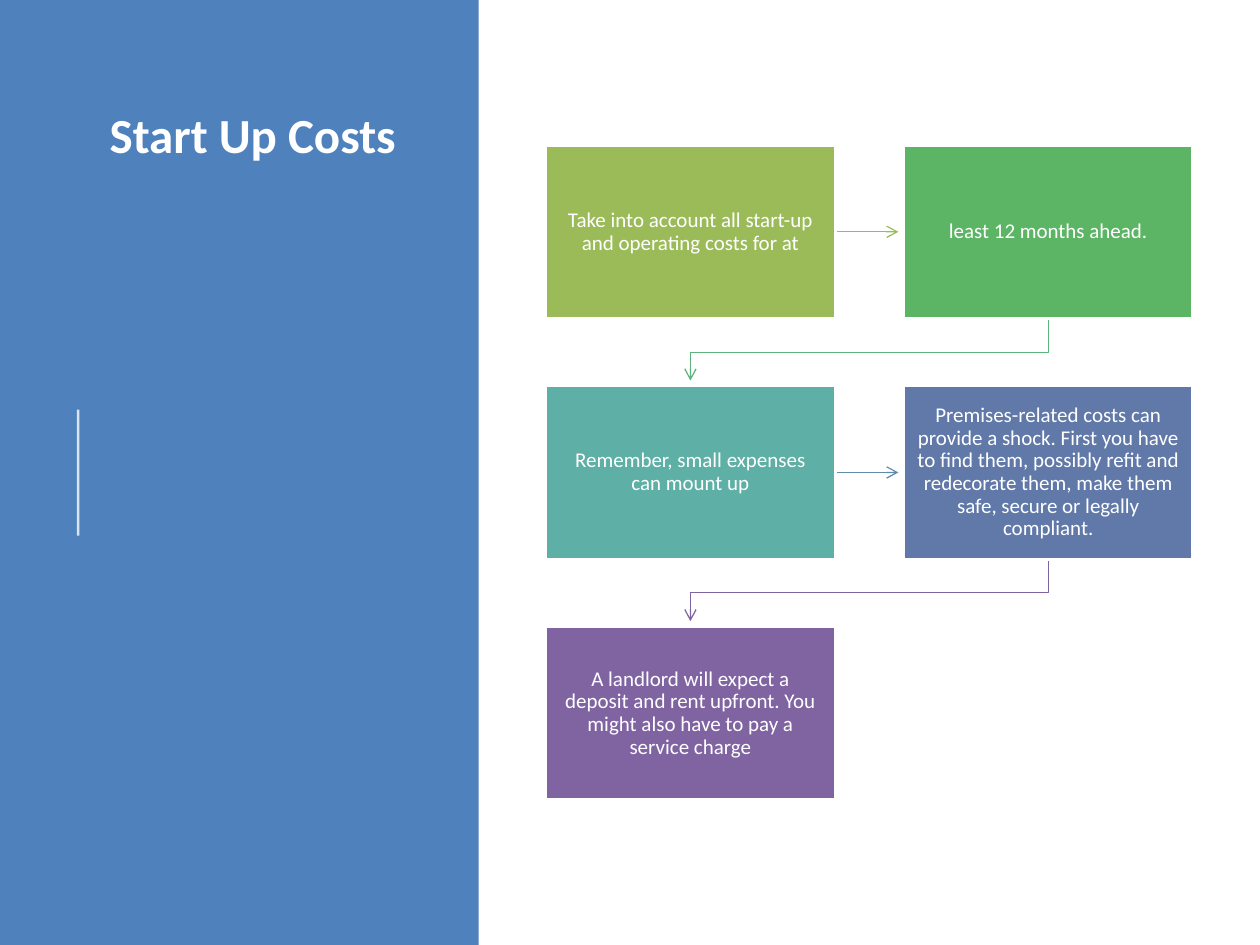
from lxml import etree
from pptx import Presentation
from pptx.dml.color import RGBColor
from pptx.enum.shapes import MSO_CONNECTOR, MSO_SHAPE
from pptx.enum.text import MSO_ANCHOR, MSO_AUTO_SIZE, PP_ALIGN
from pptx.oxml.ns import qn
from pptx.util import Inches, Pt

STRAIGHT = MSO_CONNECTOR.STRAIGHT
RECTANGLE = MSO_SHAPE.RECTANGLE
TOP, MIDDLE = MSO_ANCHOR.TOP, MSO_ANCHOR.MIDDLE
LEFT, CENTER = PP_ALIGN.LEFT, PP_ALIGN.CENTER
NO_FIT = MSO_AUTO_SIZE.NONE
FONT = "Calibri"
COLORS = {
    "white": "FFFFFF", "panel": "4F81BD",
    "olive": "9BBB59", "green": "5CB565", "teal": "5EAFA6",
    "blue": "6179A8", "purple": "8064A2",
    "green_arrow": "5CB37C", "blue_arrow": "608CAB",
}
GRID_LEFT, GRID_TOP = 4.33, 1.15
BOX_WIDTH, BOX_HEIGHT = 2.3, 1.38
COLUMN_STEP, ROW_STEP = 2.84, 1.91
ARROW_GAP = 0.04
STEPS = [
    ("Take into account all start-up and operating costs for at", "olive", "olive"),
    ("least 12 months ahead.", "green", "green_arrow"),
    ("Remember, small expenses can mount up", "teal", "blue_arrow"),
    ("Premises-related costs can provide a shock. First you have to find them, possibly refit "
     "and redecorate them, make them safe, secure or legally compliant.", "blue", "purple"),
    ("A landlord will expect a deposit and rent upfront. You might also have to pay a service charge",
     "purple", None),
]


def color(name):
    return RGBColor.from_string(COLORS[name])


def style_line(shape, name, width, arrow=False):
    shape.line.color.rgb = color(name)
    shape.line.width = Pt(width)
    properties = shape._element.spPr
    if properties.find(qn("a:effectLst")) is None:
        etree.SubElement(properties, qn("a:effectLst"))
    if arrow:
        etree.SubElement(properties.find(qn("a:ln")), qn("a:tailEnd"), type="arrow")


presentation = Presentation()
presentation.slide_width, presentation.slide_height = Inches(10), Inches(7.5)
slide = presentation.slides.add_slide(presentation.slide_layouts[5])
shapes = slide.shapes

panel = shapes.add_shape(RECTANGLE, 0, 0, Inches(3.8), presentation.slide_height)
panel.shadow.inherit = False
panel.fill.solid()
panel.fill.fore_color.rgb = color("panel")
panel.line.fill.background()

title = shapes.title
title._element.addprevious(panel._element)
title.left, title.top, title.width, title.height = map(Inches, (0.77, 0.78, 2.76, 6.02))
title_frame = title.text_frame
title_frame.text = "Start Up Costs"
title_frame.vertical_anchor = TOP
title_frame.word_wrap = True
title_frame.auto_size = NO_FIT
paragraph = title_frame.paragraphs[0]
paragraph.alignment = LEFT
paragraph.font.name = FONT
paragraph.font.size = Pt(28)
paragraph.font.bold = True
paragraph.font.color.rgb = color("white")

accent = shapes.add_connector(STRAIGHT, Inches(0.62), Inches(4.25), Inches(0.62), Inches(3.25))
style_line(accent, "white", 1.5)
accent_color = accent._element.spPr.find(".//" + qn("a:srgbClr"))
etree.SubElement(accent_color, qn("a:alpha"), val="80000")

for index, (text, fill, arrow_color) in enumerate(STEPS):
    row, column = divmod(index, 2)
    left = GRID_LEFT + column * COLUMN_STEP
    top = GRID_TOP + row * ROW_STEP
    box = shapes.add_shape(RECTANGLE, Inches(left), Inches(top), Inches(BOX_WIDTH), Inches(BOX_HEIGHT))
    box.fill.solid()
    box.fill.fore_color.rgb = color(fill)
    style_line(box, "white", 2)
    frame = box.text_frame
    frame.word_wrap = True
    frame.vertical_anchor = MIDDLE
    frame.margin_left = frame.margin_right = Inches(0.11)
    frame.margin_top = frame.margin_bottom = Inches(0.12)
    frame.text = text
    paragraph = frame.paragraphs[0]
    paragraph.alignment = CENTER
    paragraph.line_spacing = 0.9
    paragraph.font.name = FONT
    paragraph.font.size = Pt(12)
    paragraph.font.color.rgb = color("white")

    if arrow_color is None:
        continue
    if column == 0:
        middle = Inches(top + BOX_HEIGHT / 2)
        arrow = shapes.add_connector(STRAIGHT, Inches(left + BOX_WIDTH), middle,
                                     Inches(left + COLUMN_STEP - ARROW_GAP), middle)
        arrow.begin_connect(box, 3)
    else:
        start_x = left + BOX_WIDTH / 2
        end_x = start_x - COLUMN_STEP
        bottom = top + BOX_HEIGHT
        next_top = top + ROW_STEP
        turn = (bottom + next_top) / 2
        builder = shapes.build_freeform(Inches(start_x), Inches(bottom))
        builder.add_line_segments(
            [(Inches(x), Inches(y)) for x, y in
             ((start_x, turn), (end_x, turn), (end_x, next_top - ARROW_GAP))], close=False)
        arrow = builder.convert_to_shape()
        arrow.fill.background()
    style_line(arrow, arrow_color, 0.75, arrow=True)
    box._element.addprevious(arrow._element)

presentation.save("out.pptx")
